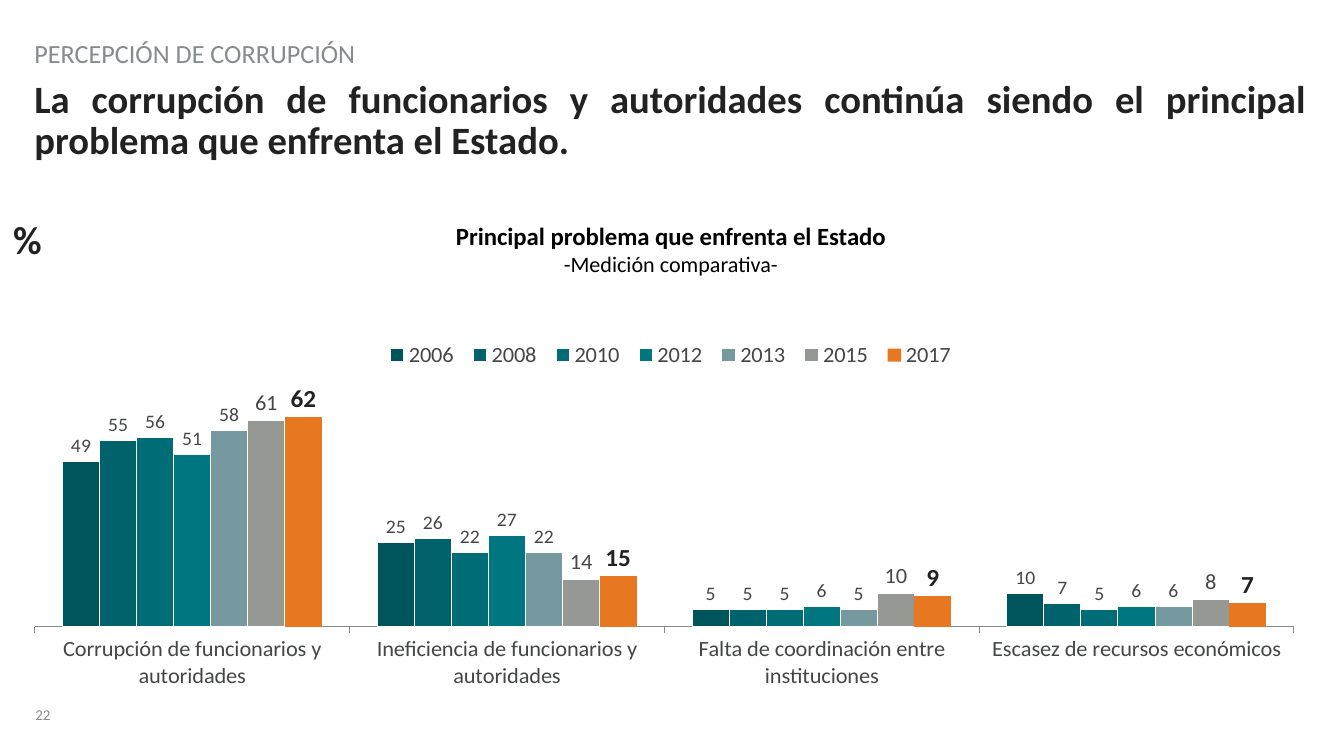
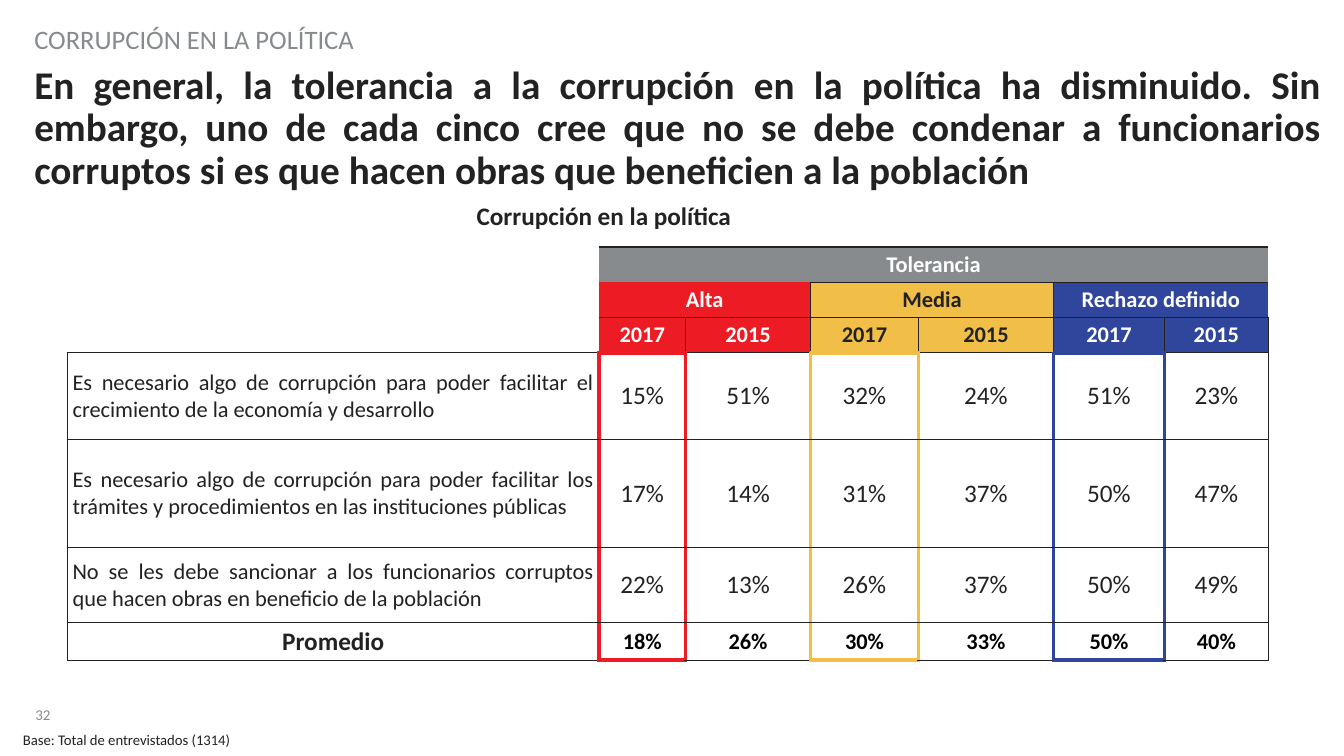
"""Build two slides on perceived corruption: a yearly chart and a tolerance table."""
from dataclasses import dataclass

from lxml import etree
from pptx import Presentation
from pptx import util as u
from pptx.chart.data import CategoryChartData
from pptx.dml.color import RGBColor
from pptx.enum import chart as ch, text
from pptx.oxml.ns import qn


@dataclass(frozen=True)
class Theme:
    font: str = "Calibri"
    ink: str = "222223"
    black: str = "000000"
    white: str = "FFFFFF"
    gray: str = "888B8D"
    label: str = "444647"
    axis: str = "8A8A8A"
    red: str = "ED1C24"
    yellow: str = "F1BE48"
    blue: str = "2F469C"
    title: float = 28
    kicker: float = 19
    body: float = 18
    small: float = 16
    tiny: float = 14
    note: float = 10.5


T = Theme()
WIDTH, HEIGHT, MARGIN = 13.33, 7.5, 0.34
ALIGN = {"l": text.PP_ALIGN.LEFT, "c": text.PP_ALIGN.CENTER, "j": text.PP_ALIGN.JUSTIFY}
ANCHOR = {"t": text.MSO_ANCHOR.TOP, "m": text.MSO_ANCHOR.MIDDLE, "b": text.MSO_ANCHOR.BOTTOM}

PROBLEMS = ["Corrupción de funcionarios y autoridades",
            "Ineficiencia de funcionarios y autoridades",
            "Falta de coordinación entre instituciones",
            "Escasez de recursos económicos"]
YEARS = [("2006", (49, 25, 5, 10), "00555D"),
         ("2008", (55, 26, 5, 7), "00626B"),
         ("2010", (56, 22, 5, 5), "006C76"),
         ("2012", (51, 27, 6, 6), "007681"),
         ("2013", (58, 22, 5, 6), "7699A0"),
         ("2015", (61, 14, 10, 8), "969894"),
         ("2017", (62, 15, 9, 7), "E87722")]

LEVELS = [("Alta", T.red, T.white), ("Media", T.yellow, T.ink),
          ("Rechazo definido", T.blue, T.white)]
COMPARED = ["2017", "2015"]
STATEMENTS = [
    ("Es necesario algo de corrupción para poder facilitar el crecimiento de la economía y desarrollo",
     (15, 51, 32, 24, 51, 23)),
    ("Es necesario algo de corrupción para poder facilitar los trámites y procedimientos en las "
     "instituciones públicas", (17, 14, 31, 37, 50, 47)),
    ("No se les debe sancionar a los funcionarios corruptos que hacen obras en beneficio de la población",
     (22, 13, 26, 37, 50, 49)),
    ("Promedio", (18, 26, 30, 33, 50, 40))]
COLUMNS = [5.27, 0.86, 1.24, 1.07, 1.34, 1.1, 1.03]
ROWS = [0.35, 0.35, 0.35, 0.86, 1.07, 0.75, 0.37]
HEAD = 3


def rgb(color):
    return RGBColor.from_string(color)


def style(font, size, color, bold=False):
    font.name, font.size, font.bold = T.font, u.Pt(size), bold
    font.color.rgb = rgb(color)


def write(frame, *lines, size=T.body, color=T.ink, bold=False, align="l", spacing=None):
    """Fill a frame; a line is a string or a (string, size, bold) tuple."""
    for i, line in enumerate(lines):
        words, points, weight = (line, size, bold) if isinstance(line, str) else line
        para = frame.add_paragraph() if i else frame.paragraphs[0]
        para.alignment = ALIGN[align]
        if spacing:
            para.line_spacing = spacing
        run = para.add_run()
        run.text = words
        style(run.font, points, color, weight)


def place(slide, box, *lines, anchor="t", inset=(0, 0), wrap=True, **look):
    frame = slide.shapes.add_textbox(*map(u.Inches, box)).text_frame
    frame.word_wrap, frame.vertical_anchor = wrap, ANCHOR[anchor]
    frame.margin_left = frame.margin_right = u.Inches(inset[0])
    frame.margin_top = frame.margin_bottom = u.Inches(inset[1])
    write(frame, *lines, **look)


def start(deck, number, kicker, headline, top, width, kicker_size=T.kicker, title_size=T.title):
    slide = deck.slides.add_slide(deck.slide_layouts[6])
    place(slide, (0.35, 6.83, 0.45, 0.35), number, anchor="b", wrap=False,
          size=10.7, color=T.gray, spacing=0.85)
    place(slide, (MARGIN, top, width, 0.84), headline, size=title_size, bold=True,
          align="j", spacing=0.9)
    place(slide, (MARGIN, top - 0.47, 9.81, 0.36), kicker, anchor="b",
          size=kicker_size, color=T.gray)
    return slide


def arrange(parent, index, inner=False, **shares):
    for old in parent.findall(qn("c:layout")):
        parent.remove(old)
    layout = etree.Element(qn("c:layout"))
    manual = etree.SubElement(layout, qn("c:manualLayout"))
    fields = {"layoutTarget": "inner"} if inner else {}
    fields.update(xMode="edge", yMode="edge", **shares)
    for tag, value in fields.items():
        etree.SubElement(manual, qn(f"c:{tag}")).set("val", str(value))
    parent.insert(index, layout)


def add_problem_chart(slide):
    data = CategoryChartData(number_format="General")
    data.categories = PROBLEMS
    for year, values, _ in YEARS:
        data.add_series(year, values)
    box = map(u.Inches, (MARGIN, 2.87, 12.62, 3.97))
    chart = slide.shapes.add_chart(ch.XL_CHART_TYPE.COLUMN_CLUSTERED, *box, data).chart
    style(chart.font, T.body, T.ink)
    chart.has_title = False
    chart.has_legend = True
    chart.legend.position = ch.XL_LEGEND_POSITION.TOP
    chart.legend.include_in_layout = False
    style(chart.legend.font, T.small, T.label)

    problems, share = chart.category_axis, chart.value_axis
    style(problems.tick_labels.font, T.small, T.label)
    problems.major_tick_mark = ch.XL_TICK_MARK.OUTSIDE
    problems.format.line.color.rgb = rgb(T.axis)
    problems.format.line.width = u.Pt(0.75)
    share.visible = share.has_major_gridlines = False
    share.minimum_scale, share.maximum_scale = 0, 70

    plot = chart.plots[0]
    plot.gap_width, plot.overlap, plot.vary_by_categories = 150, 0, False
    for series, (year, _, color) in zip(plot.series, YEARS):
        latest = year == "2017"
        series.format.fill.solid()
        series.format.fill.fore_color.rgb = rgb(color)
        if latest:
            series.format.line.fill.background()
        else:
            series.format.line.color.rgb = rgb(T.white)
            series.format.line.width = u.Pt(0.75)
        labels = series.data_labels
        labels.show_value = True
        labels.position = ch.XL_LABEL_POSITION.OUTSIDE_END
        size = {"2015": T.small, "2017": T.body}.get(year, T.tiny)
        style(labels.font, size, T.ink if latest else T.label, latest)

    root = chart.element
    arrange(root.find(".//" + qn("c:plotArea")), 0, inner=True, x=0, y=0.26, w=0.99, h=0.61)
    arrange(root.find(".//" + qn("c:legend")), 1, x=0.27, y=0.13, w=0.46, h=0.08)


def upright(row, edge):
    """Return colour and width of a vertical edge, or None."""
    if row >= HEAD:
        inside = 0 < edge < len(COLUMNS)
        return (LEVELS[(edge - 1) // 2][1], 3) if inside else (T.ink, 1)
    shown = [(7,), (3, 5, 7), (2, 3, 4, 5, 6, 7)][row]
    return (T.ink, 1) if edge in shown else None


def level(edge, column):
    """Return colour and width of a horizontal edge, or None."""
    if edge in (HEAD, len(ROWS)) and column % 2:
        return LEVELS[column // 2][1], 3
    hidden = edge < HEAD and (column == 0 or (edge == 1 and column < 3))
    return None if hidden else (T.ink, 1)


def border(cell, row, column):
    edges = {"L": upright(row, column), "R": upright(row, column + 1),
             "T": level(row, column), "B": level(row + 1, column)}
    props = cell._tc.get_or_add_tcPr()
    for side, look in edges.items():
        line = etree.SubElement(props, qn(f"a:ln{side}"))
        if look:
            color, points = look
            line.set("w", str(u.Pt(points)))
            fill = etree.SubElement(line, qn("a:solidFill"))
            etree.SubElement(fill, qn("a:srgbClr")).set("val", color)
        else:
            etree.SubElement(line, qn("a:noFill"))


def fill_cell(cell, words, fill=None, inset=(0.01, 0.01), **look):
    cell.vertical_anchor = ANCHOR["m"]
    cell.margin_left = cell.margin_right = u.Inches(inset[0])
    cell.margin_top = cell.margin_bottom = u.Inches(inset[1])
    if fill:
        cell.fill.solid()
        cell.fill.fore_color.rgb = rgb(fill)
    write(cell.text_frame, words, **{"align": "c", **look})


def add_tolerance_table(slide):
    box = map(u.Inches, (0.67, 2.45, sum(COLUMNS), sum(ROWS)))
    table = slide.shapes.add_table(len(ROWS), len(COLUMNS), *box).table
    table.first_row = table.horz_banding = False
    for column, width in zip(table.columns, COLUMNS):
        column.width = u.Inches(width)
    for r, height in enumerate(ROWS):
        table.rows[r].height = u.Inches(height)
        for c in range(len(COLUMNS)):
            border(table.cell(r, c), r, c)
            table.cell(r, c).fill.background()
            if r < HEAD and c == 0:
                fill_cell(table.cell(r, c), "", size=T.small)

    heading = dict(inset=(0.02, 0.04), size=T.small, bold=True)
    table.cell(0, 1).merge(table.cell(0, len(COLUMNS) - 1))
    fill_cell(table.cell(0, 1), "Tolerancia", T.gray, color=T.white, **heading)
    for i, (name, fill, color) in enumerate(LEVELS):
        first = 1 + i * len(COMPARED)
        table.cell(1, first).merge(table.cell(1, first + 1))
        fill_cell(table.cell(1, first), name, fill, color=color, **heading)
        for j, year in enumerate(COMPARED):
            fill_cell(table.cell(2, first + j), year, fill, color=color, **heading)

    for r, (statement, shares) in enumerate(STATEMENTS, HEAD):
        average = r == len(ROWS) - 1
        lead = dict(bold=True) if average else dict(inset=(0.05, 0.05), size=T.small, align="j")
        figure = dict(size=T.small, color=T.black, bold=True) if average else {}
        fill_cell(table.cell(r, 0), statement, **lead)
        for c, share in enumerate(shares, 1):
            fill_cell(table.cell(r, c), f"{share}%", **figure)


def main():
    deck = Presentation()
    deck.slide_width, deck.slide_height = u.Inches(WIDTH), u.Inches(HEIGHT)

    slide = start(deck, "22", "PERCEPCIÓN DE CORRUPCIÓN",
                  "La corrupción de funcionarios y autoridades continúa siendo el principal "
                  "problema que enfrenta el Estado.", 0.79, 12.62,
                  kicker_size=18.7, title_size=27.6)
    place(slide, (3.32, 2.14, 6.67, 0.67),
          ("Principal problema que enfrenta el Estado", 17.7, True),
          ("-Medición comparativa-", 15.8, False),
          inset=(0.1, 0.05), color=T.black, align="c")
    add_problem_chart(slide)
    place(slide, (0.13, 2.14, 0.8, 0.47), "%", size=T.title, bold=True)

    slide = start(deck, "32", "CORRUPCIÓN EN LA POLÍTICA",
                  "En general, la tolerancia a la corrupción en la política ha disminuido. Sin "
                  "embargo, uno de cada cinco cree que no se debe condenar a funcionarios corruptos "
                  "si es que hacen obras que beneficien a la población", 0.65, 12.76)
    add_tolerance_table(slide)
    place(slide, (0.13, 7.2, 2.36, 0.2), "Base: Total de entrevistados (1314)",
          inset=(0.1, 0.05), size=T.note)
    place(slide, (3.81, 1.99, 4.36, 0.3), "Corrupción en la política", bold=True, align="c")
    deck.save("out.pptx")


if __name__ == "__main__":
    main()
